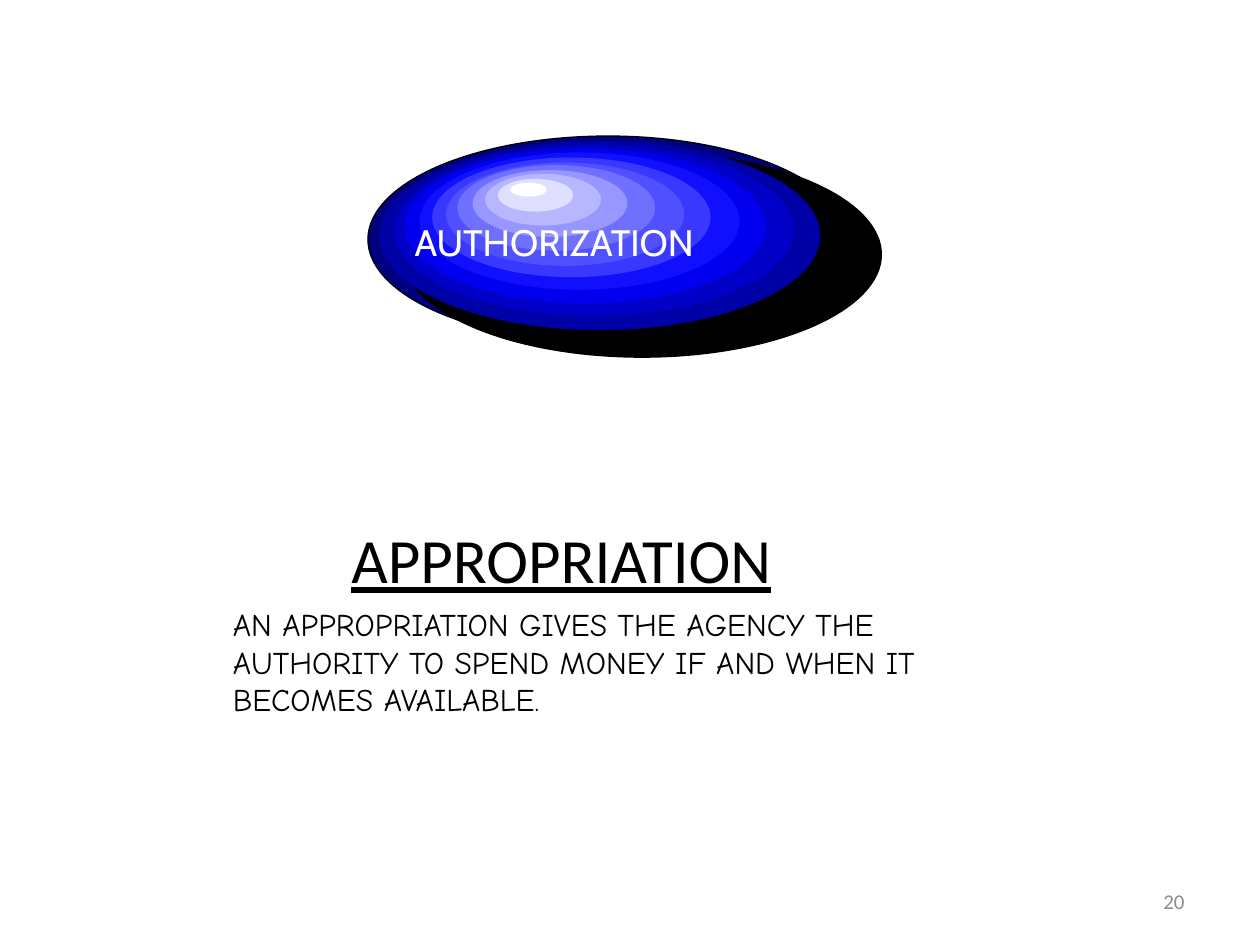
from dataclasses import dataclass
from pptx import Presentation
from pptx.dml.color import RGBColor
from pptx.enum.shapes import MSO_CONNECTOR, MSO_SHAPE
from pptx.enum.text import MSO_ANCHOR, PP_ALIGN
from pptx.oxml.ns import qn
from pptx.util import Inches, Pt
from lxml.etree import SubElement


@dataclass(frozen=True)
class Theme:
    black: str = "000000"
    white: str = "FFFFFF"
    gray: str = "8C8C8C"
    rim: str = "00007F"
    label: int = 21
    title: int = 36
    body: int = 18
    stop: int = 16
    page: int = 12


THEME = Theme()

RINGS = [
    (0.09, 0.04, 3.5, 1.5, "0000A7"),
    (0.21, 0.07, 3.17, 1.36, "0000C7"),
    (0.29, 0.1, 2.87, 1.23, "0000EF"),
    (0.41, 0.13, 2.54, 1.09, "1010FF"),
    (0.51, 0.17, 2.21, 0.95, "3838FF"),
    (0.62, 0.21, 1.89, 0.82, "5050FF"),
    (0.71, 0.23, 1.57, 0.68, "7070FF"),
    (0.83, 0.27, 1.23, 0.53, "9797FF"),
    (0.93, 0.3, 0.92, 0.41, "B7B7FF"),
    (1.03, 0.34, 0.6, 0.26, "DFDFFF"),
    (1.13, 0.37, 0.29, 0.11, "FFFFFF"),
]


def apply(target, style):
    for name, value in style.items():
        setattr(target, name, value)


def add_text(shapes, box, runs, font, color, align=PP_ALIGN.LEFT, frame=None, line=False):
    text = shapes.add_textbox(*map(Inches, box)).text_frame
    apply(text, {"word_wrap": True, **(frame or {})})
    para = text.paragraphs[0]
    para.alignment = align
    for words, size in runs:
        run = para.add_run()
        run.text = words
        style = {"name": font, "size": Pt(size), "underline": line or None}
        apply(run.font, style)
        run.font.color.rgb = RGBColor.from_string(color)


def add_oval(shapes, box, color, edge=False):
    oval = shapes.add_shape(MSO_SHAPE.OVAL, *map(Inches, box))
    oval.shadow.inherit = False
    oval.fill.solid()
    oval.fill.fore_color.rgb = RGBColor.from_string(color)
    if edge:
        oval.line.color.rgb = RGBColor.from_string(THEME.black)
        oval.line.width = Pt(0)
    else:
        oval.line.fill.background()


def add_button(slide, box):
    left, top, width, height = box
    shapes = slide.shapes.add_group_shape().shapes
    add_oval(shapes, box, THEME.rim, True)
    add_oval(shapes, (left + 0.27, top + 0.12, width, height), THEME.black)
    for x, y, wide, high, color in RINGS:
        add_oval(shapes, (left + x, top + y, wide, high), color)
    sides = ("left", "top", "right", "bottom")
    add_text(shapes, (left + 0.37, top + 0.66, 3.64, 1.88),
             [("AUTHORIZATION", THEME.label)], "Cabin", THEME.white,
             frame={f"margin_{side}": 0 for side in sides})
    ends = (left + 3.82, top + 0.73, left + 3.92, top + 0.72)
    dash = shapes.add_connector(MSO_CONNECTOR.STRAIGHT, *map(Inches, ends))
    dash.line.color.rgb = RGBColor.from_string(THEME.black)
    dash.line.width = Pt(3.5)
    SubElement(dash.element.spPr, qn("a:effectLst"))


def add_body(slide, box):
    left, top, width, height = box
    words = ("AN APPROPRIATION GIVES THE AGENCY THE AUTHORITY TO SPEND MONEY "
             "IF AND WHEN IT BECOMES AVAILABLE")
    add_text(slide.shapes, (left + 1.17, top + 0.67, 6.25, height - 0.67),
             [(words, THEME.body), (".", THEME.stop)], "Comic Neue", THEME.black)
    add_text(slide.shapes, (left, top, width, 0.71),
             [("APPROPRIATION", THEME.title)], "Calibri", THEME.black,
             PP_ALIGN.CENTER, line=True)


def add_page(slide, box):
    add_text(slide.shapes, box, [("20", THEME.page)], "Calibri", THEME.gray,
             PP_ALIGN.RIGHT, {"vertical_anchor": MSO_ANCHOR.MIDDLE})


def main():
    deck = Presentation()
    apply(deck, {"slide_width": Inches(10), "slide_height": Inches(7.5)})
    slide = deck.slides.add_slide(deck.slide_layouts[6])
    add_button(slide, (2.92, 1.08, 3.81, 1.64))
    add_body(slide, (0.58, 4.08, 7.75, 1.68))
    add_page(slide, (7.17, 6.95, 2.33, 0.4))
    deck.save("out.pptx")


if __name__ == "__main__":
    main()
